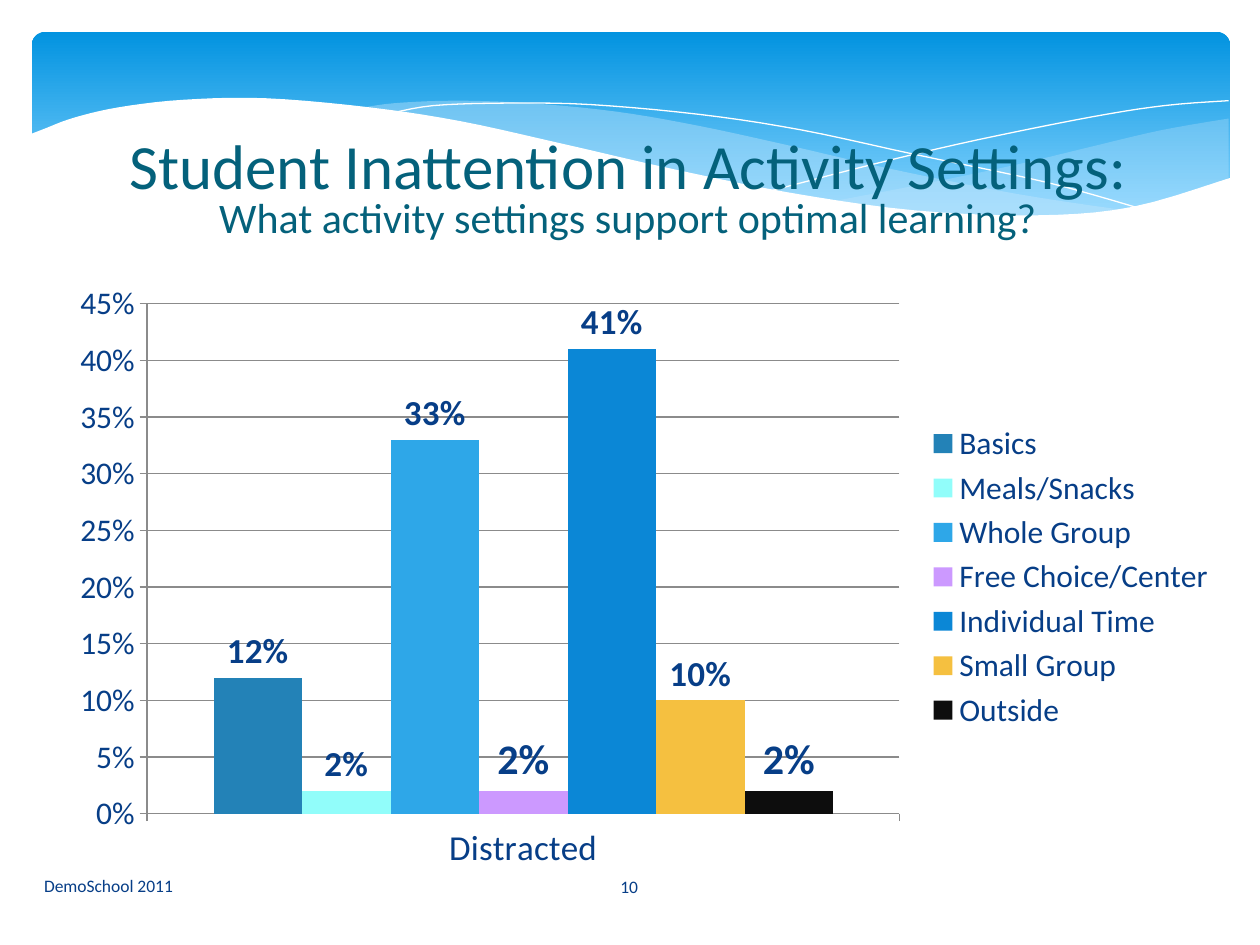
import pptx
import pptx.chart.data
import pptx.dml.color
import pptx.enum.chart
import pptx.enum.shapes
import pptx.enum.text
import pptx.oxml
import pptx.oxml.ns
import pptx.util
from pptx.util import Cm

COLORS = {
    "panel_top": "0293E0", "panel_bottom": "83D3FE", "wave": "C6E7FC",
    "white": "FFFFFF", "title": "04617B", "navy": "073E87", "grid": "8B8B8B",
}
FONT = "Calibri"

# Settings: name, share distracted, bar colour, label size
SETTINGS = [
    ("Basics", 0.12, "2382B7", 20),
    ("Meals/Snacks", 0.02, "91FDFA", 20),
    ("Whole Group", 0.33, "2EA7E8", 20),
    ("Free Choice/Center", 0.02, "CC99FF", 24),
    ("Individual Time", 0.41, "0B87D6", 20),
    ("Small Group", 0.10, "F5C040", 20),
    ("Outside", 0.02, "0D0D0D", 24),
]

# Wave edges: key points in centimetres, joined by smooth curves
RIGHT_WAVE = [
    [(24.77, 2.39), (23.39, 2.63), (21.87, 2.99), (20.45, 3.33), (18.52, 3.73), (16.79, 4.06)],
    [(16.79, 4.06), (18.59, 4.27), (20.12, 4.37), (21.46, 4.36), (22.58, 4.22), (23.57, 4.01),
     (24.77, 3.61)],
]
MIDDLE_WAVE = [
    [(22.68, 4.24), (20.5, 3.91), (17.93, 3.4), (15.98, 2.95), (14.1, 2.54), (12.42, 2.25),
     (10.67, 2.08), (9.17, 2.03), (7.95, 2.08), (7.26, 2.18)],
    [(7.26, 2.18), (8.69, 2.39), (10.26, 2.69), (12.47, 3.2), (14.38, 3.63), (16.1, 3.96),
     (18.01, 4.22), (19.94, 4.37), (21.29, 4.37), (22.68, 4.24)],
]
LONG_LINE = [[(7.85, 2.29), (8.74, 2.13), (10.19, 2.08), (11.91, 2.11), (14.12, 2.31),
              (16.15, 2.62), (18.47, 3.12), (21.11, 3.68), (23.04, 4.22)]]
SHORT_LINE = [[(15.57, 3.84), (17.65, 3.3), (19.71, 2.82), (22, 2.36), (23.47, 2.13),
               (24.77, 2.03)]]
WHITE_WAVE = [
    [(24.82, 3.58), (22.83, 4.17), (20.9, 4.34), (18.44, 4.24), (15.9, 3.88), (13.44, 3.38),
     (11.35, 2.9), (9.27, 2.44), (7.42, 2.16), (5.36, 1.98), (3.71, 2.01), (2.41, 2.16),
     (1.5, 2.37), (0.91, 2.59), (0.58, 2.72)],
    [(0.58, 5.69), (24.82, 5.69)],
]


def rgb(name):
    return pptx.dml.color.RGBColor.from_string(COLORS.get(name, name))


def smooth(points, steps=5):
    """Catmull-Rom curve through the points."""
    padded = [points[0], *points, points[-1]]
    curve = [points[0]]
    for a, b, c, d in zip(padded, padded[1:], padded[2:], padded[3:]):
        for step in range(1, steps + 1):
            t = step / steps
            curve.append(tuple(
                q + 0.5 * t * (r - p + t * (2 * p - 5 * q + 4 * r - s + t * (3 * (q - r) + s - p)))
                for p, q, r, s in zip(a, b, c, d)))
    return curve


class SlideBuilder:
    def __init__(self, slide):
        self.slide = slide

    def panel(self, left, top, width, height):
        box = self.slide.shapes.add_shape(
            pptx.enum.shapes.MSO_SHAPE.ROUNDED_RECTANGLE,
            Cm(left), Cm(top), Cm(width), Cm(height))
        box.adjustments[0] = 0.07
        box.shadow.inherit = False
        box.line.fill.background()
        box.fill.gradient()
        box.fill.gradient_angle = 270
        stops = zip(box.fill.gradient_stops, ("panel_top", "panel_bottom"), (0, 0.9))
        for stop, color, position in stops:
            stop.color.rgb = rgb(color)
            stop.position = position

    def wave(self, edges, fill=None, alpha=100):
        points = [(Cm(x), Cm(y)) for edge in edges for x, y in smooth(edge)]
        builder = self.slide.shapes.build_freeform(*points[0])
        builder.add_line_segments(points[1:], close=fill is not None)
        shape = builder.convert_to_shape()
        shape.shadow.inherit = False
        if fill is None:
            shape.fill.background()
            shape.line.color.rgb = rgb("white")
            shape.line.width = 0
            return
        shape.line.fill.background()
        shape.fill.solid()
        shape.fill.fore_color.rgb = rgb(fill)
        if alpha < 100:
            color = shape.fill._xPr.find(".//" + pptx.oxml.ns.qn("a:srgbClr"))
            color.append(pptx.oxml.parse_xml(
                f'<a:alpha {pptx.oxml.ns.nsdecls("a")} val="{alpha * 1000}"/>'))

    def text(self, left, top, width, height, lines, color, align="LEFT",
             anchor="MIDDLE", spacing=1.0):
        box = self.slide.shapes.add_textbox(Cm(left), Cm(top), Cm(width), Cm(height))
        frame = box.text_frame
        frame.word_wrap = True
        frame.vertical_anchor = getattr(pptx.enum.text.MSO_ANCHOR, anchor)
        for index, (words, size) in enumerate(lines):
            para = frame.add_paragraph() if index else frame.paragraphs[0]
            para.alignment = getattr(pptx.enum.text.PP_ALIGN, align)
            para.line_spacing = spacing
            span = para.add_run()
            span.text = words
            self.style(span.font, size, color)

    def style(self, font, size, color, bold=False):
        font.name = FONT
        font.size = pptx.util.Pt(size)
        font.bold = bold
        font.color.rgb = rgb(color)

    def column_chart(self, left, top, width, height, category, settings, plot_area):
        data = pptx.chart.data.CategoryChartData(number_format="0%")
        data.categories = [category]
        for name, share, _, _ in settings:
            data.add_series(name, [share])
        chart = self.slide.shapes.add_chart(
            pptx.enum.chart.XL_CHART_TYPE.COLUMN_CLUSTERED,
            Cm(left), Cm(top), Cm(width), Cm(height), data).chart
        self.style(chart.font, 18, "navy")
        chart.has_title = False

        # Legend
        chart.has_legend = True
        chart.legend.position = pptx.enum.chart.XL_LEGEND_POSITION.RIGHT
        chart.legend.include_in_layout = False
        self.style(chart.legend.font, 18, "navy")

        # Axes
        for axis, size in ((chart.category_axis, 20), (chart.value_axis, 18)):
            axis.major_tick_mark = pptx.enum.chart.XL_TICK_MARK.OUTSIDE
            axis.format.line.color.rgb = rgb("grid")
            self.style(axis.tick_labels.font, size, "navy")
        scale = chart.value_axis
        scale.minimum_scale, scale.maximum_scale, scale.major_unit = 0, 0.45, 0.05
        scale.major_gridlines.format.line.color.rgb = rgb("grid")
        scale.tick_labels.number_format = "0%"
        scale.tick_labels.number_format_is_linked = False

        # Columns and their labels
        plot = chart.plots[0]
        plot.gap_width, plot.overlap, plot.vary_by_categories = 150, 0, False
        for series, (_, _, color, size) in zip(plot.series, settings):
            series.format.fill.solid()
            series.format.fill.fore_color.rgb = rgb(color)
            labels = series.data_labels
            labels.show_value = True
            labels.number_format = "0%"
            labels.number_format_is_linked = False
            labels.position = pptx.enum.chart.XL_LABEL_POSITION.OUTSIDE_END
            self.style(labels.font, size, "navy", bold=True)

        # Plot area as fractions of the chart
        area = chart._chartSpace.chart.plotArea
        for old in area.findall(pptx.oxml.ns.qn("c:layout")):
            area.remove(old)
        sizes = "".join(f'<c:{key} val="{value}"/>' for key, value in zip("xywh", plot_area))
        area.insert(0, pptx.oxml.parse_xml(
            f'<c:layout {pptx.oxml.ns.nsdecls("c")}><c:manualLayout>'
            '<c:layoutTarget val="inner"/><c:xMode val="edge"/><c:yMode val="edge"/>'
            f'{sizes}</c:manualLayout></c:layout>'))


def main():
    deck = pptx.Presentation()
    deck.slide_width, deck.slide_height = Cm(25.4), Cm(19.05)
    page = SlideBuilder(deck.slides.add_slide(deck.slide_layouts[6]))

    # Header band with waves
    page.panel(0.64, 0.64, 24.16, 3.96)
    page.wave(RIGHT_WAVE, "wave", 29)
    page.wave(MIDDLE_WAVE, "wave", 40)
    page.wave(LONG_LINE)
    page.wave(SHORT_LINE)
    page.wave(WHITE_WAVE, "white")

    # Chart
    page.column_chart(1.07, 5.51, 23.7, 12.24, "Distracted", SETTINGS, (0.08, 0.05, 0.64, 0.84))

    # Title and footer
    page.text(0, 2.72, 25.32, 3.53,
              [("Student Inattention in Activity Settings:", 36),
               ("What activity settings support optimal learning?", 24)],
              "title", "CENTER", "TOP", 0.8)
    page.text(0.64, 17.35, 9.32, 1.02, [("DemoSchool 2011", 10)], "navy")
    page.text(11.07, 17.37, 3.23, 1.02, [("10", 10)], "navy", "CENTER")
    deck.save("out.pptx")


if __name__ == "__main__":
    main()
